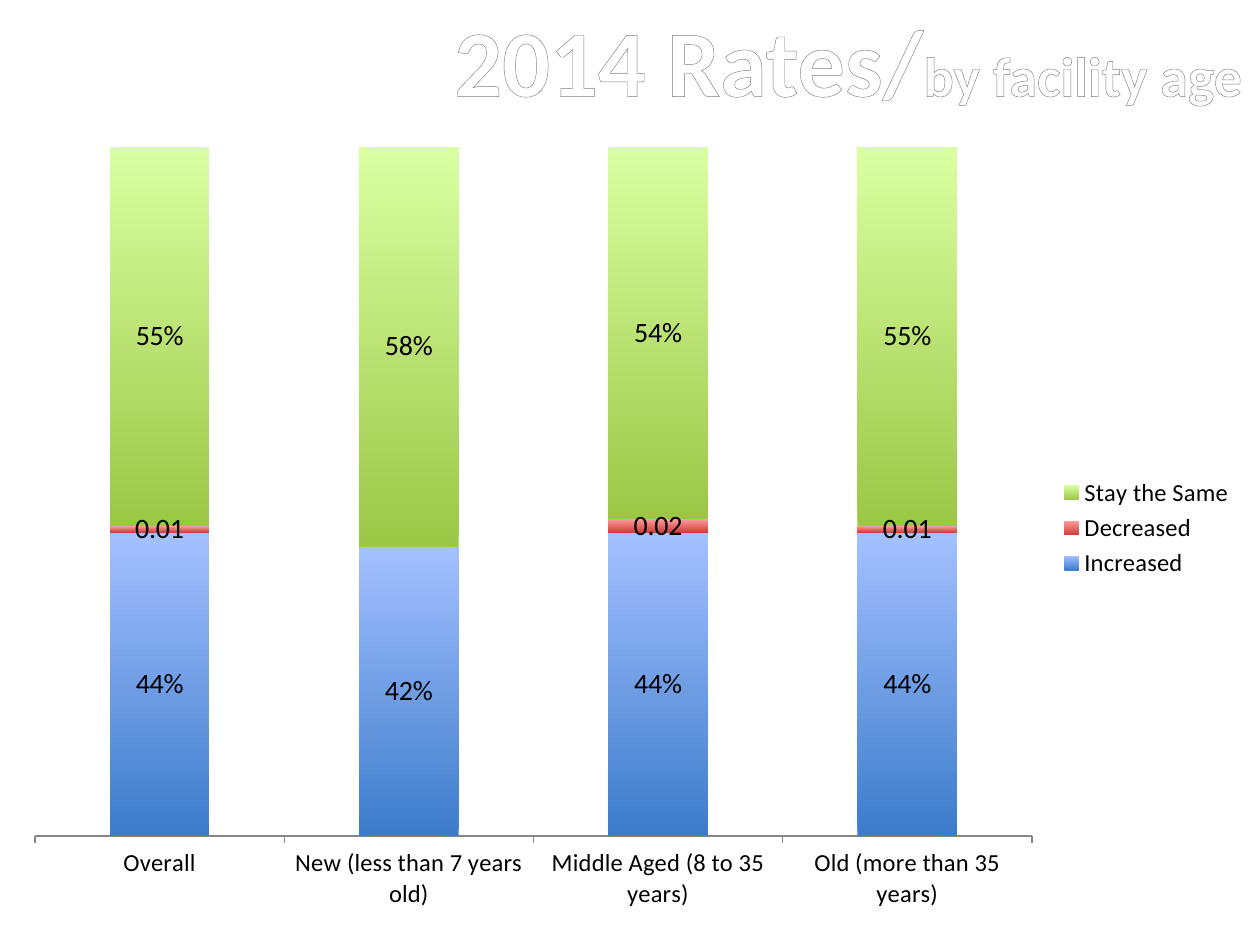
from dataclasses import dataclass

from lxml.etree import SubElement
from pptx import Presentation
from pptx.chart.data import CategoryChartData
from pptx.dml.color import RGBColor
from pptx.enum.chart import XL_CHART_TYPE as ChartType
from pptx.enum.chart import XL_LABEL_POSITION as LabelPos
from pptx.enum.chart import XL_LEGEND_POSITION as LegendPos
from pptx.enum.chart import XL_TICK_MARK as Tick
from pptx.enum.text import MSO_AUTO_SIZE as AutoSize
from pptx.enum.text import PP_ALIGN as Align
from pptx.oxml import parse_xml
from pptx.oxml.ns import nsdecls, qn
from pptx.util import Emu, Pt

PX = 914400 / 126
FONT = "Calibri"
BLACK = RGBColor(0x00, 0x00, 0x00)
WHITE = RGBColor(0xFF, 0xFF, 0xFF)
GREY = RGBColor(0x7F, 0x7F, 0x7F)
OUTLINE = RGBColor(0x7D, 0x7D, 0x7D)
AXIS = RGBColor(0x86, 0x86, 0x86)
BLUE_LOW, BLUE_HIGH = RGBColor(0x3C, 0x7C, 0xCB), RGBColor(0xA4, 0xC0, 0xFF)
RED_LOW, RED_HIGH = RGBColor(0xCD, 0x3C, 0x38), RGBColor(0xFF, 0x9F, 0x9D)
GREEN_LOW, GREEN_HIGH = RGBColor(0x9C, 0xC7, 0x46), RGBColor(0xDA, 0xFF, 0xA2)


@dataclass
class Box:
    left: int
    top: int
    width: int
    height: int

    def emu(self) -> list[Emu]:
        return [px(v) for v in (self.left, self.top, self.width, self.height)]


@dataclass
class Answer:
    name: str
    values: tuple
    low: RGBColor
    high: RGBColor
    number_format: str


TITLE_BOX = Box(436, -4, 825, 242)
CHART_BOX = Box(10, 131, 1237, 794)
PLOT_BOX = Box(35, 147, 997, 689)
TITLE_RUNS = (("2014 Rates/", 54), ("by facility age", 32))
TITLE_STOPS = ((0, WHITE), (9, WHITE), (50, GREY), (79, WHITE), (100, WHITE))
AGES = ("Overall", "New (less than 7 years old)",
        "Middle Aged (8 to 35 years)", "Old (more than 35 years)")
ANSWERS = (
    Answer("Increased", (0.44, 0.42, 0.44, 0.44), BLUE_LOW, BLUE_HIGH, "0%"),
    Answer("Decreased", (0.01, None, 0.02, 0.01), RED_LOW, RED_HIGH, "General"),
    Answer("Stay the Same", (0.55, 0.58, 0.54, 0.55), GREEN_LOW, GREEN_HIGH, "0%"),
)


def px(value: int) -> Emu:
    return Emu(round(value * PX))


def set_font(font, size: int, **extra) -> None:
    for name, value in {"name": FONT, "size": Pt(size), **extra}.items():
        setattr(font, name, value)


def outline_text(r) -> None:
    """Give a run a thin outline and a vertical gradient fill."""
    stops = "".join(f'<a:gs pos="{pos * 1000}"><a:srgbClr val="{color}"/></a:gs>'
                    for pos, color in TITLE_STOPS)
    line = (f'<a:ln {nsdecls("a")} w="{Pt(0.83)}"><a:solidFill>'
            f'<a:srgbClr val="{OUTLINE}"/></a:solidFill></a:ln>')
    fill = (f'<a:gradFill {nsdecls("a")}><a:gsLst>{stops}</a:gsLst>'
            '<a:lin ang="5400000"/></a:gradFill>')
    rpr = r.font._element
    for i, xml in enumerate((line, fill)):
        rpr.insert(i, parse_xml(xml))


def add_title(s) -> None:
    tf = s.shapes.add_textbox(*TITLE_BOX.emu()).text_frame
    tf.word_wrap = False
    tf.auto_size = AutoSize.SHAPE_TO_FIT_TEXT
    p = tf.paragraphs[0]
    p.alignment = Align.CENTER
    for text, size in TITLE_RUNS:
        r = p.add_run()
        r.text = text
        set_font(r.font, size, bold=True)
        outline_text(r)


def place_plot(chart) -> None:
    """Fix the inner plot area as fractions of the chart frame."""
    area = chart._chartSpace.find(".//" + qn("c:plotArea"))
    layout = area.find(qn("c:layout"))
    if layout is None:
        layout = parse_xml(f'<c:layout {nsdecls("c")}/>')
        area.insert(0, layout)
    manual = SubElement(layout, qn("c:manualLayout"))
    parts = {
        "layoutTarget": "inner", "xMode": "edge", "yMode": "edge",
        "x": (PLOT_BOX.left - CHART_BOX.left) / CHART_BOX.width,
        "y": (PLOT_BOX.top - CHART_BOX.top) / CHART_BOX.height,
        "w": PLOT_BOX.width / CHART_BOX.width,
        "h": PLOT_BOX.height / CHART_BOX.height,
    }
    for name, value in parts.items():
        SubElement(manual, qn(f"c:{name}")).set("val", str(value))


def style_series(series, answer: Answer) -> None:
    fill = series.format.fill
    fill.gradient()
    fill.gradient_angle = 90
    for stop, color in zip(fill.gradient_stops, (answer.low, answer.high)):
        stop.color.rgb = color
    labels = series.data_labels
    settings = {"show_value": True, "position": LabelPos.CENTER,
                "number_format": answer.number_format,
                "number_format_is_linked": False}
    for name, value in settings.items():
        setattr(labels, name, value)
    set_font(labels.font, 16)
    labels.font.color.rgb = BLACK


def add_rates_chart(s) -> None:
    data = CategoryChartData()
    data.categories = AGES
    for answer in ANSWERS:
        data.add_series(answer.name, answer.values)
    chart = s.shapes.add_chart(ChartType.COLUMN_STACKED_100,
                               *CHART_BOX.emu(), data).chart
    set_font(chart.font, 10)
    chart.font.color.rgb = BLACK
    chart.has_title = False

    # Columns
    plot = chart.plots[0]
    for name, value in {"gap_width": 150, "overlap": 100,
                        "vary_by_categories": False}.items():
        setattr(plot, name, value)
    for series, answer in zip(plot.series, ANSWERS):
        style_series(series, answer)

    # Axes
    chart.value_axis.visible = False
    chart.value_axis.has_major_gridlines = False
    axis = chart.category_axis
    axis.major_tick_mark = Tick.OUTSIDE
    axis.format.line.color.rgb = AXIS
    set_font(axis.tick_labels.font, 14)

    # Legend
    chart.has_legend = True
    chart.legend.position = LegendPos.RIGHT
    chart.legend.include_in_layout = False
    set_font(chart.legend.font, 14)
    place_plot(chart)


def main() -> None:
    prs = Presentation()
    prs.slide_width, prs.slide_height = px(1260), px(945)
    s = prs.slides.add_slide(prs.slide_layouts[6])
    add_title(s)
    add_rates_chart(s)
    prs.save("out.pptx")


if __name__ == "__main__":
    main()
